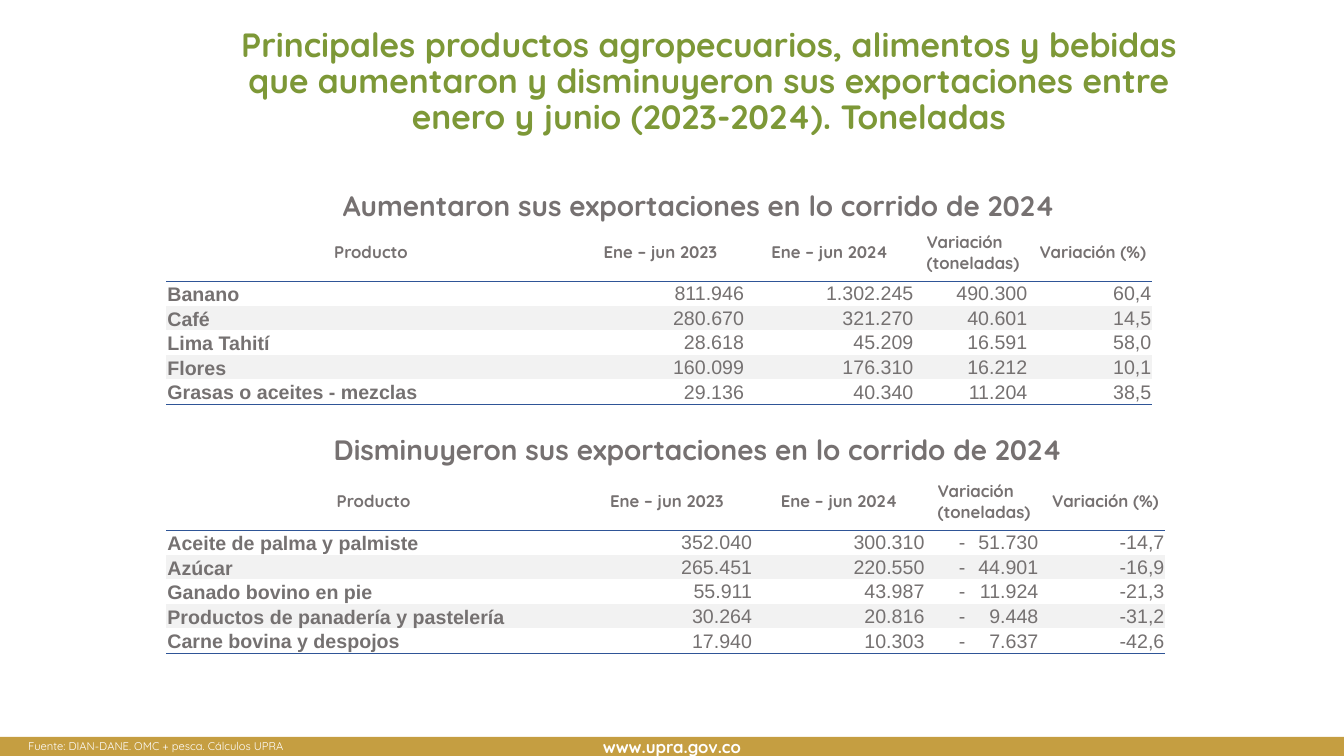
from lxml.etree import SubElement
from pptx import Presentation
from pptx.dml.color import RGBColor
from pptx.enum.shapes import MSO_SHAPE as Shape
from pptx.enum.text import MSO_ANCHOR as Anchor, PP_ALIGN as Align
from pptx.oxml import parse_xml
from pptx.oxml.ns import nsdecls, qn
from pptx.util import Pt

PX = 9144  # 100 px to the inch
COLORS = {
    "title": "7D9837", "heading": "767171", "body": "757171", "bar": "C59E41",
    "band": "F2F2F2", "rule": "2F5597", "white": "FFFFFF",
}
NO_GRID_STYLE = "{2D5ABB26-0587-4C30-8999-92F81FD0307C}"
HEADER = ["Producto", "Ene – jun 2023", "Ene – jun 2024",
          "Variación (toneladas)", "Variación (%)"]
TONNES = 3  # column of the variation in tonnes
INCREASES = [
    ["Banano", "811.946", "1.302.245", "490.300", "60,4"],
    ["Café", "280.670", "321.270", "40.601", "14,5"],
    ["Lima Tahití", "28.618", "45.209", "16.591", "58,0"],
    ["Flores", "160.099", "176.310", "16.212", "10,1"],
    ["Grasas o aceites - mezclas", "29.136", "40.340", "11.204", "38,5"],
]
DECREASES = [
    ["Aceite de palma y palmiste", "352.040", "300.310", "-\t51.730", "-14,7"],
    ["Azúcar", "265.451", "220.550", "-\t44.901", "-16,9"],
    ["Ganado bovino en pie", "55.911", "43.987", "-\t11.924", "-21,3"],
    ["Productos de panadería y pastelería", "30.264", "20.816", "-\t9.448", "-31,2"],
    ["Carne bovina y despojos", "17.940", "10.303", "-\t7.637", "-42,6"],
]


def rgb(name):
    return RGBColor.from_string(COLORS[name])


def style_paragraph(paragraph, size, color, align, bold=False, font="Quicksand"):
    paragraph.alignment = align
    paragraph.font.size = Pt(size)
    paragraph.font.name = font
    paragraph.font.bold = bold
    paragraph.font.color.rgb = rgb(color)


def add_text(slide, box, text, size, color, align=Align.CENTER, bold=True):
    shape = slide.shapes.add_textbox(*(value * PX for value in box))
    shape.text_frame.word_wrap = True
    paragraph = shape.text_frame.paragraphs[0]
    paragraph.text = text
    style_paragraph(paragraph, size, color, align, bold)
    return paragraph


def add_footer_bar(slide, box, text):
    bar = slide.shapes.add_shape(Shape.RECTANGLE, *(value * PX for value in box))
    bar.shadow.inherit = False
    bar.fill.solid()
    bar.fill.fore_color.rgb = rgb("bar")
    bar.line.fill.background()
    bar.text_frame.vertical_anchor = Anchor.MIDDLE
    paragraph = bar.text_frame.paragraphs[0]
    paragraph.text = text
    style_paragraph(paragraph, 12, "white", Align.CENTER, True)


def add_bottom_rule(cell):
    cell._tc.get_or_add_tcPr().insert(0, parse_xml(
        f'<a:lnB {nsdecls("a")} w="3175"><a:solidFill>'
        f'<a:srgbClr val="{COLORS["rule"]}"/></a:solidFill></a:lnB>'))


def add_right_tab(paragraph, position):
    tabs = SubElement(paragraph._p.get_or_add_pPr(), qn("a:tabLst"))
    SubElement(tabs, qn("a:tab"), pos=str(position * PX), algn="r")


def fill_cell(cell, text, row, column):
    """Write a cell; tonnes keep a sign at the left and digits at the right."""
    cell.margin_left = cell.margin_right = cell.margin_top = PX
    cell.margin_bottom = 0
    cell.vertical_anchor = Anchor.MIDDLE
    if row and row % 2 == 0:
        cell.fill.solid()
        cell.fill.fore_color.rgb = rgb("band")
    else:
        cell.fill.background()
    paragraph = cell.text_frame.paragraphs[0]
    paragraph.text = text
    if row == 0:
        align = Align.CENTER
        if column == TONNES:
            cell.margin_left = 12 * PX
            align = Align.LEFT
        style_paragraph(paragraph, 12, "heading", align, True)
        return
    align = Align.RIGHT if column else Align.LEFT
    if column == 0:
        cell.vertical_anchor = Anchor.BOTTOM
    elif "\t" in text:
        cell.margin_left = 33 * PX
        add_right_tab(paragraph, 79)
        align = Align.LEFT
    elif column == TONNES:
        cell.margin_right = 6 * PX
    style_paragraph(paragraph, 14, "body", align, column == 0, "Arial")


def add_product_table(slide, left, top, widths, products):
    rows = [HEADER] + products
    heights = [58] + [24] * len(products)
    frame = slide.shapes.add_table(
        len(rows), len(HEADER), left * PX, top * PX, sum(widths) * PX, sum(heights) * PX)
    table = frame.table
    table.horz_banding = table.first_row = False
    table._tbl.tblPr.find(qn("a:tableStyleId")).text = NO_GRID_STYLE
    for column, width in zip(table.columns, widths):
        column.width = width * PX
    for row, (texts, height) in enumerate(zip(rows, heights)):
        table.rows[row].height = height * PX
        for column, text in enumerate(texts):
            cell = table.cell(row, column)
            fill_cell(cell, text, row, column)
            if row in (0, len(products)):
                add_bottom_rule(cell)


def main():
    presentation = Presentation()
    presentation.slide_width = 1333 * PX
    presentation.slide_height = 750 * PX
    slide = presentation.slides.add_slide(presentation.slide_layouts[6])

    add_footer_bar(slide, (0, 731, 1333, 19), "www.upra.gov.co")
    title = add_text(
        slide, (211, 23, 984, 107),
        "Principales productos agropecuarios, alimentos y bebidas que aumentaron y "
        "disminuyeron sus exportaciones entre enero y junio (2023-2024). Toneladas",
        24, "title")
    title.line_spacing = 0.9
    add_text(slide, (18, 729, 1291, 24), "Fuente: DIAN-DANE. OMC + pesca. Cálculos UPRA",
             8, "white", Align.JUSTIFY, False)
    add_text(slide, (218, 182, 951, 44),
             "Aumentaron sus exportaciones en lo corrido de 2024", 20, "heading")
    add_product_table(slide, 165, 221, [406, 168, 168, 118, 118], INCREASES)
    add_text(slide, (178, 424, 1029, 44),
             "Disminuyeron sus exportaciones en lo corrido de 2024", 20, "heading")
    add_product_table(slide, 165, 468, [411, 171, 171, 119, 119], DECREASES)
    presentation.save("out.pptx")


if __name__ == "__main__":
    main()
